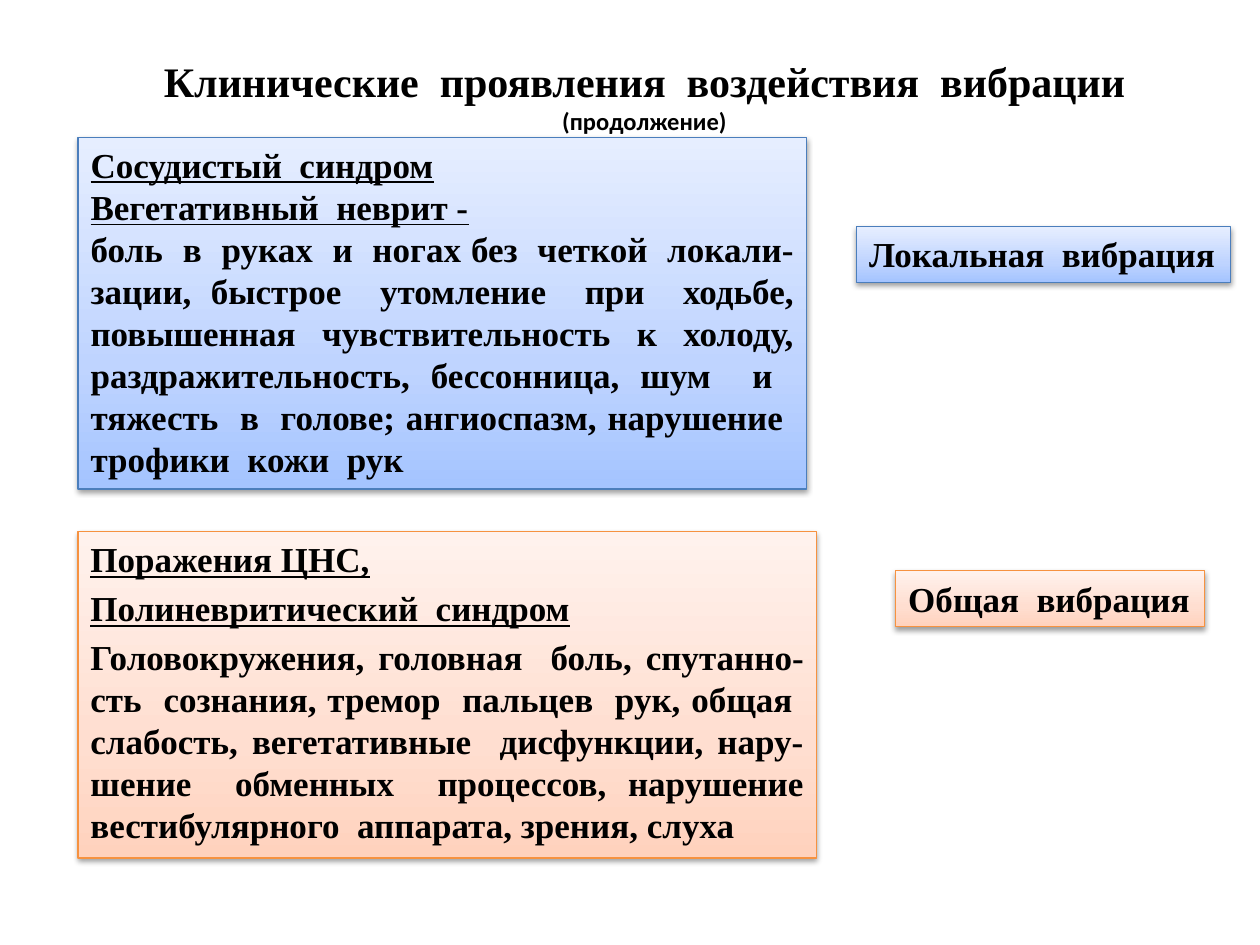
from copy import deepcopy
from dataclasses import dataclass

from lxml import etree
from pptx import Presentation
from pptx.dml.color import RGBColor
from pptx.enum.shapes import MSO_SHAPE
from pptx.enum.text import MSO_ANCHOR, MSO_AUTO_SIZE, PP_ALIGN
from pptx.oxml.ns import qn
from pptx.util import Pt

RECT = MSO_SHAPE.RECTANGLE
TOP = MSO_ANCHOR.TOP
GROW = MSO_AUTO_SIZE.SHAPE_TO_FIT_TEXT
LEFT, CENTER, JUSTIFY = PP_ALIGN.LEFT, PP_ALIGN.CENTER, PP_ALIGN.JUSTIFY
SERIF, SANS = "Times New Roman", "Calibri"
HANG = Pt(27)

COLORS = {
    "text": "000000",
    "blue_line": "4B7EBC",
    "blue_0": "A4C4FF",
    "blue_35": "BFD4FF",
    "blue_100": "E6EEFF",
    "orange_line": "F69240",
    "orange_0": "FFD2BD",
    "orange_35": "FFDED0",
    "orange_100": "FFF2ED",
}


@dataclass
class Para:
    text: str
    underline: bool = False
    align: PP_ALIGN = LEFT
    hanging: bool = False
    before: float = 0


@dataclass
class Panel:
    left: float
    top: float
    width: float
    height: float
    theme: str
    paras: list[Para]
    wrap: bool = True


PANELS = [
    Panel(44.64, 78.5, 416.2, 200.9, "blue", [
        Para("Сосудистый  синдром", underline=True),
        Para("Вегетативный  неврит -", underline=True),
        Para("боль  в  руках  и  ногах без  четкой  локали-зации, быстрое  "
             "утомление  при  ходьбе, повышенная  чувствительность  к  холоду, "
             "раздражительность, бессонница, шум  и  тяжесть  в  голове; "
             "ангиоспазм, нарушение  трофики  кожи  рук", align=JUSTIFY),
    ]),
    Panel(44.64, 303.8, 421.9, 186.5, "orange", [
        Para("Поражения ЦНС,", underline=True, hanging=True, before=4),
        Para("Полиневритический  синдром", underline=True, hanging=True, before=4),
        Para("Головокружения, головная  боль, спутанно-сть  сознания, тремор  "
             "пальцев  рук, общая  слабость, вегетативные  дисфункции, "
             "нару-шение  обменных  процессов, нарушение вестибулярного  "
             "аппарата, зрения, слуха ", align=JUSTIFY, before=4),
    ]),
    Panel(489.6, 129.6, 213.8, 31.7, "blue",
          [Para("Локальная  вибрация", hanging=True, before=4)], wrap=False),
    Panel(511.9, 326.2, 176.4, 31.7, "orange",
          [Para("Общая  вибрация", hanging=True, before=4)], wrap=False),
]


def rgb(name: str) -> RGBColor:
    return RGBColor.from_string(COLORS[name])


def add_run(p, text: str, size: float, font: str, underline: bool = False) -> None:
    r = p.add_run()
    r.text = text
    r.font.size = Pt(size)
    r.font.name = font
    r.font.bold = True
    r.font.underline = underline
    r.font.color.rgb = rgb("text")


def fill_gradient(sp, theme: str) -> None:
    sp.fill.gradient()
    sp.fill.gradient_angle = 90
    stops = sp._element.spPr.find(f".//{qn('a:gsLst')}")
    stops.append(deepcopy(stops[-1]))
    for stop, position in zip(sp.fill.gradient_stops, (0, 35, 100)):
        stop.color.rgb = rgb(f"{theme}_{position}")
        stop.position = position / 100


def add_shadow(sp) -> None:
    sp.shadow.inherit = False
    effects = sp._element.spPr.find(qn("a:effectLst"))
    shadow = etree.SubElement(
        effects, qn("a:outerShdw"), blurRad=str(Pt(3.1)), dist=str(Pt(1.6)),
        dir="5400000", rotWithShape="0")
    color = etree.SubElement(shadow, qn("a:srgbClr"), val=COLORS["text"])
    etree.SubElement(color, qn("a:alpha"), val="38000")


def add_panel(s, panel: Panel) -> None:
    sp = s.shapes.add_shape(RECT, Pt(panel.left), Pt(panel.top),
                            Pt(panel.width), Pt(panel.height))
    fill_gradient(sp, panel.theme)
    sp.line.color.rgb = rgb(f"{panel.theme}_line")
    sp.line.width = Pt(0.75)
    add_shadow(sp)
    tf = sp.text_frame
    tf.word_wrap = panel.wrap
    tf.auto_size = GROW
    tf.vertical_anchor = TOP
    for i, para in enumerate(panel.paras):
        p = tf.add_paragraph() if i else tf.paragraphs[0]
        p.alignment = para.align
        p.space_before = Pt(para.before)
        if para.hanging:
            pPr = p._p.get_or_add_pPr()
            pPr.set("marL", str(HANG))
            pPr.set("indent", str(-HANG))
        add_run(p, para.text, 20, SERIF, para.underline)


def add_title(s) -> None:
    tf = s.shapes.add_textbox(Pt(56.2), Pt(28.1), Pt(624.2), Pt(53.3)).text_frame
    tf.word_wrap = True
    tf.auto_size = GROW
    p = tf.paragraphs[0]
    p.alignment = CENTER
    add_run(p, "Клинические  проявления  воздействия  вибрации ", 24, SERIF)
    add_run(p, "(продолжение)", 14, SANS)


def main() -> None:
    prs = Presentation()
    prs.slide_width, prs.slide_height = Pt(720), Pt(540)
    s = prs.slides.add_slide(prs.slide_layouts[6])
    add_title(s)
    for panel in PANELS:
        add_panel(s, panel)
    prs.save("out.pptx")


if __name__ == "__main__":
    main()
